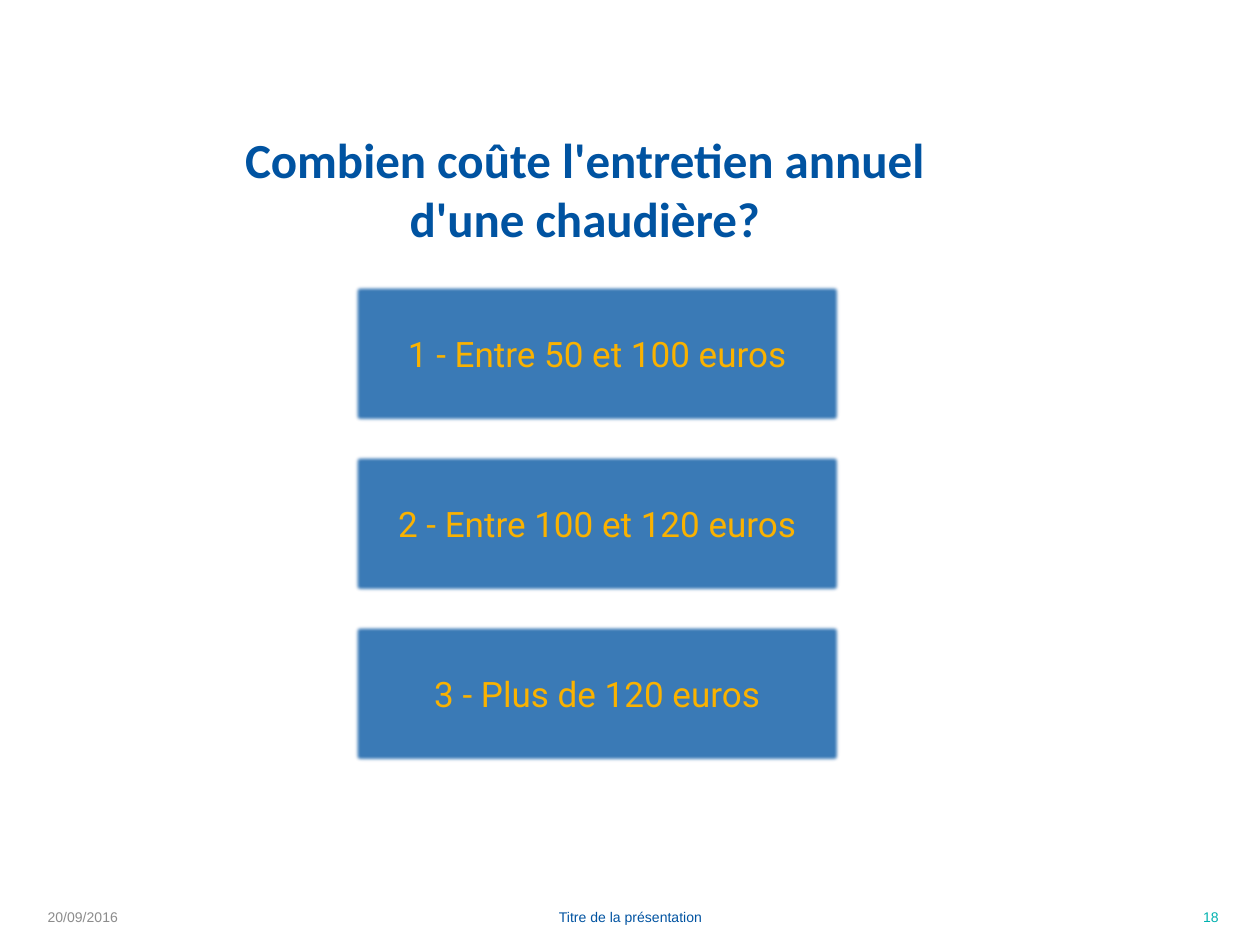
from lxml import etree
from pptx import Presentation
from pptx.dml.color import RGBColor
from pptx.enum.shapes import MSO_SHAPE
from pptx.enum.text import MSO_ANCHOR, PP_ALIGN
from pptx.oxml.ns import qn
from pptx.util import Inches, Pt

BLUE, GOLD, GREY, TEAL = "0053A1", "FAB200", "8C8C8C", "00B1AF"
ANSWERS = [
    "1 - Entre 50 et 100 euros",
    "2 - Entre 100 et 120 euros",
    "3 - Plus de 120 euros",
]


def rgb(color):
    return RGBColor.from_string(color)


def set_text(shape, text, size, font, color, align, bold=False):
    tf = shape.text_frame
    tf.text = text
    tf.word_wrap = True
    tf.vertical_anchor = MSO_ANCHOR.MIDDLE
    p = tf.paragraphs[0]
    p.alignment = align
    for r in p.runs:
        r.font.size = Pt(size)
        r.font.name = font
        r.font.bold = bold
        r.font.color.rgb = rgb(color)


def add_label(s, left, top, width, height, *style, **options):
    box = s.shapes.add_textbox(Inches(left), Inches(top), Inches(width), Inches(height))
    set_text(box, *style, **options)


def add_answer(s, top, text):
    sp = s.shapes.add_shape(MSO_SHAPE.RECTANGLE, Inches(2.8), Inches(top),
                            Inches(3.88), Inches(1.11))
    sp.fill.solid()
    sp.fill.fore_color.rgb = rgb(BLUE)
    sp.line.fill.background()
    sp.shadow.inherit = False
    # Translucent fill and soft edges
    props = sp.element.spPr
    fill_color = props.find(qn("a:solidFill"))[0]
    etree.SubElement(fill_color, qn("a:alpha"), val="77000")
    effects = props.find(qn("a:effectLst"))
    etree.SubElement(effects, qn("a:softEdge"), rad=str(Pt(2.5)))
    set_text(sp, text, 20, "Roboto", GOLD, PP_ALIGN.CENTER)


def main():
    prs = Presentation()
    prs.slide_width, prs.slide_height = Inches(10), Inches(7.5)
    s = prs.slides.add_slide(prs.slide_layouts[6])

    # Question
    add_label(s, 1.4, 1.15, 6.48, 0.69, "Combien coûte l'entretien annuel\vd'une chaudière?",
              28, "Calibri", BLUE, PP_ALIGN.CENTER, bold=True)

    # Footer
    for left, width, text, color, align in [
        (0.28, 2.33, "20/09/2016", GREY, PP_ALIGN.LEFT),
        (3.42, 3.17, "Titre de la présentation", BLUE, PP_ALIGN.CENTER),
        (7.44, 2.33, "18", TEAL, PP_ALIGN.RIGHT),
    ]:
        add_label(s, left, 7.08, width, 0.4, text, 8, "Arial", color, align)

    # Answers
    for i, text in enumerate(ANSWERS):
        add_answer(s, 2.25 + 1.35 * i, text)

    prs.save("out.pptx")


if __name__ == "__main__":
    main()
